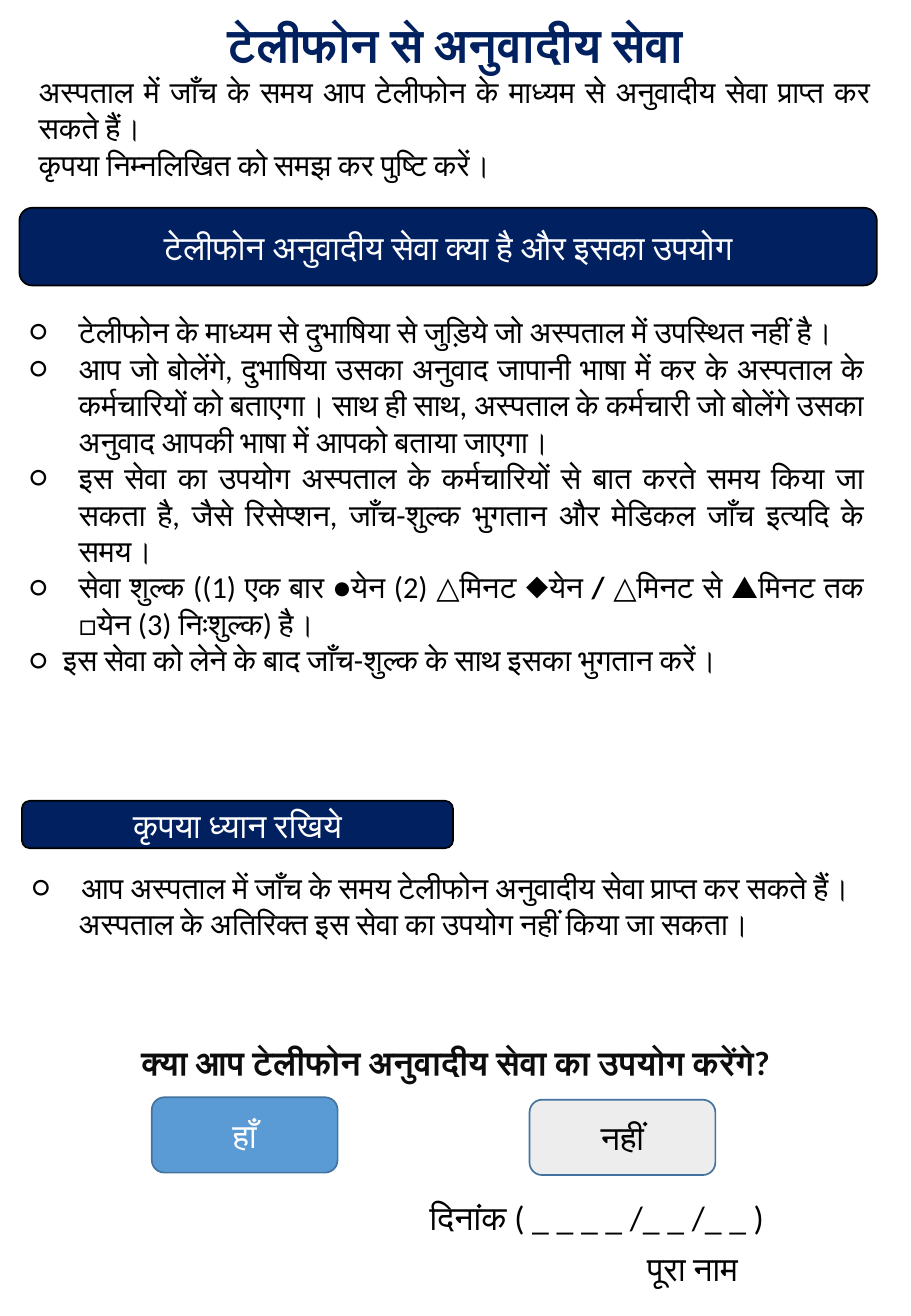
"""Build the Hindi consent form for the hospital telephone interpreting service."""
from dataclasses import dataclass
from typing import Optional

import pptx
import pptx.dml.color
import pptx.enum.shapes
import pptx.enum.text
import pptx.oxml.ns
import pptx.util
from lxml import etree

ALIGN = pptx.enum.text.PP_ALIGN
ANCHOR = pptx.enum.text.MSO_ANCHOR
COLUMNS, ROWS = 75, 108.3
CELL = pptx.util.Inches(0.1)
BOLD_MARK = "**"


@dataclass(frozen=True)
class Theme:
    font: str = "Calibri"
    navy: str = "002060"
    black: str = "000000"
    white: str = "FFFFFF"
    ink: str = "0D0D0D"
    blue: str = "5B9BD5"
    blue_edge: str = "43739E"
    grey: str = "EDEDED"
    title: float = 28
    heading: float = 20
    body: float = 18


THEME = Theme()


@dataclass(frozen=True)
class Area:
    column: float
    row: float
    width: float
    height: float

    def lengths(self) -> list[int]:
        return [round(cells * CELL) for cells in (self.column, self.row, self.width, self.height)]


@dataclass(frozen=True)
class Line:
    text: str
    indent: float = 0
    bullet: Optional[str] = None
    after: float = 0


@dataclass(frozen=True)
class TextBlock:
    area: Area
    lines: tuple[Line, ...]
    size: float = THEME.body
    color: str = THEME.black
    bold: bool = False
    align: ALIGN = ALIGN.JUSTIFY


@dataclass(frozen=True)
class Panel:
    area: Area
    label: str
    fill: str = THEME.navy
    edge: str = THEME.black
    color: str = THEME.white


def item(text: str, indent: float = 4) -> Line:
    return Line(text, indent, "○")


TEXT_BLOCKS = (
    TextBlock(Area(0, 0.8, COLUMNS, 5.7), (Line("टेलीफोन से अनुवादीय सेवा"),),
              THEME.title, THEME.navy, True, ALIGN.CENTER),
    TextBlock(Area(2.2, 5.5, 70.4, 10.4), (
        Line("अस्पताल में जाँच के समय आप टेलीफोन के माध्यम से अनुवादीय सेवा प्राप्त कर सकते हैं।"),
        Line("कृपया निम्नलिखित को समझ कर पुष्टि करें।"),
    )),
    TextBlock(Area(1.5, 25.3, 70.6, 37.4), (
        item("टेलीफोन के माध्यम से दुभाषिया से जुड़िये जो अस्पताल में उपस्थित नहीं है।"),
        item("आप जो बोलेंगे, दुभाषिया उसका अनुवाद जापानी भाषा में कर के अस्पताल के कर्मचारियों को "
             "बताएगा। साथ ही साथ, अस्पताल के कर्मचारी जो बोलेंगे उसका अनुवाद आपकी भाषा में आपको "
             "बताया जाएगा।"),
        item("इस सेवा का उपयोग अस्पताल के कर्मचारियों से बात करते समय किया जा सकता है, जैसे "
             "रिसेप्शन, जाँच-शुल्क भुगतान और मेडिकल जाँच इत्यदि के समय।"),
        item("सेवा शुल्क ((1) एक बार ●येन (2) △मिनट ◆येन **/ **△मिनट से ▲मिनट तक □येन "
             "(3) निःशुल्क) है।"),
        item("इस सेवा को लेने के बाद जाँच-शुल्क के साथ इसका भुगतान करें।", 2.7),
    )),
    TextBlock(Area(1.7, 71, 70.6, 13.1), (
        item("आप अस्पताल में जाँच के समय टेलीफोन अनुवादीय सेवा प्राप्त कर सकते हैं।"),
        Line("अस्पताल के अतिरिक्त इस सेवा का उपयोग नहीं किया जा सकता।", 3.8),
    )),
    TextBlock(Area(0, 85.2, COLUMNS, 4.4), (Line("क्या आप टेलीफोन अनुवादीय सेवा का उपयोग करेंगे?"),),
              THEME.heading, THEME.ink, True, ALIGN.CENTER),
    TextBlock(Area(1.6, 98, 71.7, 8.6), (
        Line("दिनांक ( _ _ _ _ /_ _ /_ _ )", 32.8, after=6),
        Line("पूरा नाम", 50.7),
    ), THEME.heading, align=ALIGN.LEFT),
)

PANELS = (
    Panel(Area(1.6, 17.1, 70.6, 6.4), "टेलीफोन अनुवादीय सेवा क्या है और इसका उपयोग"),
    Panel(Area(1.8, 65.9, 35.5, 3.9), "कृपया ध्यान रखिये"),
    Panel(Area(12.5, 90.3, 15.3, 6.2), "हाँ", THEME.blue, THEME.blue_edge),
    Panel(Area(43.6, 90.5, 15.3, 6.2), "नहीं", THEME.grey, THEME.blue_edge, THEME.black),
)


def rgb(color: str) -> pptx.dml.color.RGBColor:
    return pptx.dml.color.RGBColor.from_string(color)


def add_element(parent: etree._Element, tag: str, **attributes: str) -> None:
    etree.SubElement(parent, pptx.oxml.ns.qn(tag), attributes)


def write_text(para: pptx.text.text._Paragraph, text: str, *, size: float, color: str,
               bold: bool = False, align: ALIGN = ALIGN.CENTER, indent: float = 0,
               bullet: Optional[str] = None, after: float = 0) -> None:
    para.alignment = align
    properties = para._p.get_or_add_pPr()
    properties.set("marL", str(round(indent * CELL)))
    properties.set("indent", str(round(-indent * CELL) if bullet else 0))
    if bullet:
        add_element(properties, "a:buFont", typeface=THEME.font)
        add_element(properties, "a:buChar", char=bullet)
    para.space_after = pptx.util.Pt(after)
    for index, part in enumerate(text.split(BOLD_MARK)):
        span = para.add_run()
        span.text = part
        span.font.size = pptx.util.Pt(size)
        span.font.bold = bold or index % 2 == 1
        span.font.color.rgb = rgb(color)
        span.font.name = THEME.font
        for tag in ("a:ea", "a:cs"):
            add_element(span.font._element, tag, typeface=THEME.font)


def draw_text(slide: pptx.slide.Slide, block: TextBlock) -> None:
    box = slide.shapes.add_textbox(*block.area.lengths())
    frame = box.text_frame
    frame.word_wrap = True
    frame.auto_size = pptx.enum.text.MSO_AUTO_SIZE.SHAPE_TO_FIT_TEXT
    for index, line in enumerate(block.lines):
        para = frame.add_paragraph() if index else frame.paragraphs[0]
        write_text(para, line.text, size=block.size, color=block.color, bold=block.bold,
                   align=block.align, indent=line.indent, bullet=line.bullet, after=line.after)


def draw_panel(slide: pptx.slide.Slide, panel: Panel) -> None:
    rounded = pptx.enum.shapes.MSO_SHAPE.ROUNDED_RECTANGLE
    box = slide.shapes.add_shape(rounded, *panel.area.lengths())
    box.shadow.inherit = False
    box.fill.solid()
    box.fill.fore_color.rgb = rgb(panel.fill)
    box.line.color.rgb = rgb(panel.edge)
    box.line.width = pptx.util.Pt(1)
    box.text_frame.word_wrap = True
    box.text_frame.vertical_anchor = ANCHOR.MIDDLE
    write_text(box.text_frame.paragraphs[0], panel.label, size=THEME.heading, color=panel.color)


def main() -> None:
    deck = pptx.Presentation()
    deck.slide_width, deck.slide_height = round(COLUMNS * CELL), round(ROWS * CELL)
    page = deck.slides.add_slide(deck.slide_layouts[6])
    for block in TEXT_BLOCKS:
        draw_text(page, block)
    for panel in PANELS:
        draw_panel(page, panel)
    deck.save("out.pptx")


if __name__ == "__main__":
    main()
